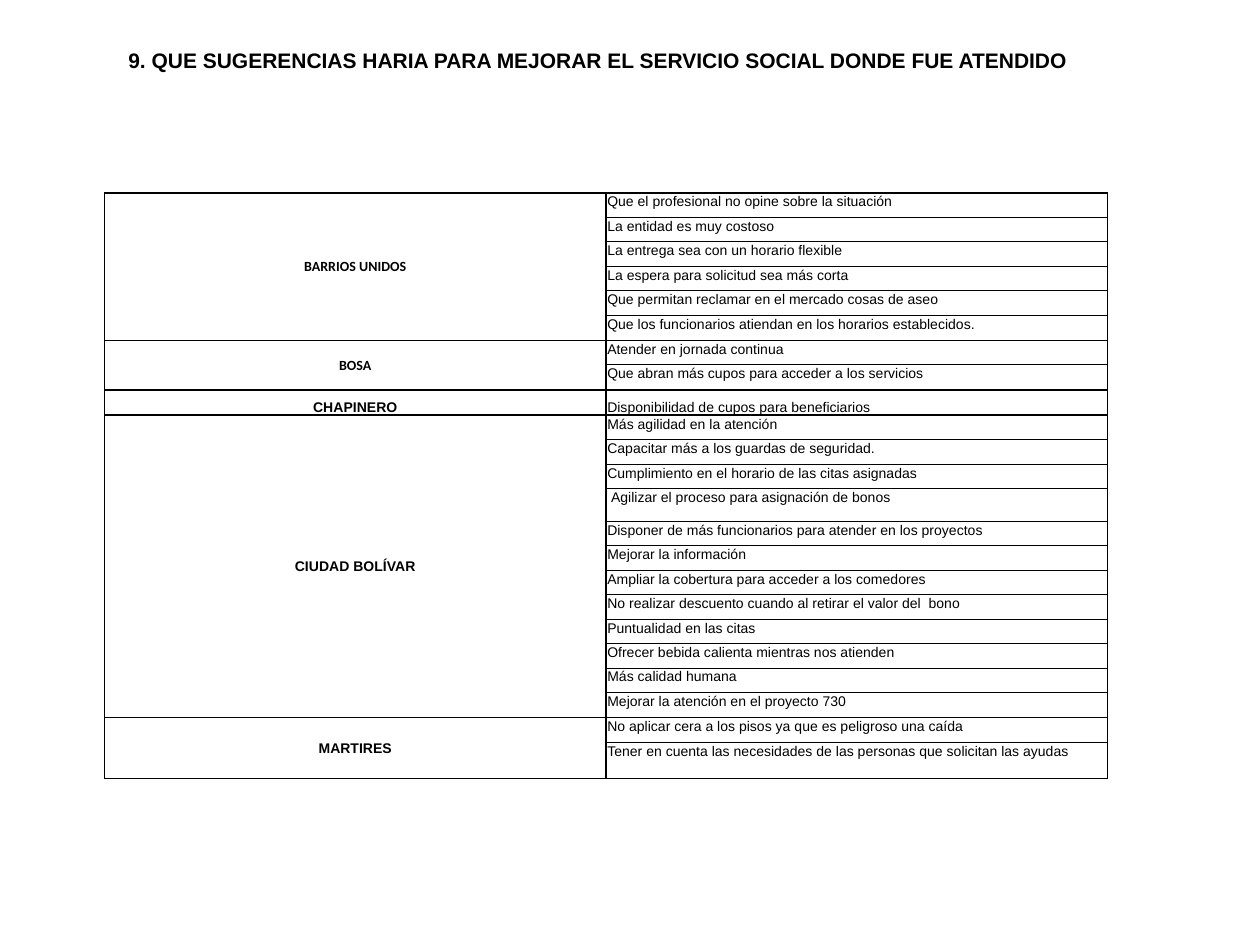
from dataclasses import dataclass

from lxml.etree import SubElement
from pptx import Presentation
from pptx.dml.color import RGBColor
from pptx.enum.text import MSO_ANCHOR as Anchor, PP_ALIGN as Align
from pptx.oxml.ns import qn
from pptx.util import Inches, Pt

COLORS = {"text": "000000", "border": "000000"}
THICK, THIN = 1, 0.5
ROW_HEIGHT = Inches(14 / 72)
GROUP_END_HEIGHT = Inches(0.2)
SPECIAL_HEIGHTS = {12: Inches(0.26), 22: Inches(0.29)}
INDENTED_ROW = 12


@dataclass
class Locality:
    name: str
    suggestions: list[str]
    font: str = "Arial"
    anchor: Anchor = Anchor.MIDDLE
    suggestion_anchor: Anchor = Anchor.TOP
    suggestion_align: Align = Align.JUSTIFY


LOCALITIES = [
    Locality("BARRIOS UNIDOS", [
        "Que el profesional no opine sobre la situación",
        "La entidad es muy costoso",
        "La entrega sea con un horario flexible",
        "La espera para solicitud sea más corta",
        "Que permitan reclamar en el mercado cosas de aseo",
        "Que los funcionarios atiendan en los horarios establecidos.",
    ], font="Calibri"),
    Locality("BOSA", [
        "Atender en jornada continua",
        "Que abran más cupos para acceder a los servicios",
    ], font="Calibri"),
    Locality("CHAPINERO", ["Disponibilidad de cupos para beneficiarios"],
             anchor=Anchor.BOTTOM, suggestion_anchor=Anchor.BOTTOM,
             suggestion_align=Align.LEFT),
    Locality("CIUDAD BOLÍVAR", [
        "Más agilidad en la atención",
        "Capacitar más a los guardas de seguridad.",
        "Cumplimiento en el horario de las citas asignadas",
        "Agilizar el proceso para asignación de bonos",
        "Disponer de más funcionarios para atender en los proyectos",
        "Mejorar la información",
        "Ampliar la cobertura para acceder a los comedores",
        "No realizar descuento cuando al retirar el valor del  bono",
        "Puntualidad en las citas",
        "Ofrecer bebida calienta mientras nos atienden",
        "Más calidad humana",
        "Mejorar la atención en el proyecto 730",
    ]),
    Locality("MARTIRES", [
        "No aplicar cera a los pisos ya que es peligroso una caída",
        "Tener en cuenta las necesidades de las personas que solicitan las ayudas",
    ]),
]


def add_run(paragraph, text: str, size: float, font: str, bold: bool) -> None:
    run = paragraph.add_run()
    run.text = text
    run.font.size = Pt(size)
    run.font.name = font
    run.font.bold = bold
    run.font.color.rgb = RGBColor.from_string(COLORS["text"])


def set_borders(cell, top: float = THICK, bottom: float = THICK) -> None:
    """Draw the four cell borders; the sides are always thick."""
    properties = cell._tc.get_or_add_tcPr()
    widths = {"a:lnL": THICK, "a:lnR": THICK, "a:lnT": top, "a:lnB": bottom}
    for tag, width in widths.items():
        line = SubElement(properties, qn(tag), w=str(Pt(width)))
        fill = SubElement(line, qn("a:solidFill"))
        SubElement(fill, qn("a:srgbClr"), val=COLORS["border"])


def fill_cell(cell, text: str, font: str, bold: bool, align: Align, anchor: Anchor) -> None:
    cell.margin_left = cell.margin_right = cell.margin_top = Inches(0.01)
    cell.margin_bottom = 0
    cell.vertical_anchor = anchor
    cell.fill.background()
    paragraph = cell.text_frame.paragraphs[0]
    paragraph.alignment = align
    add_run(paragraph, text, 8, font, bold)


def add_locality(table, first_row: int, locality: Locality) -> int:
    """Fill the rows of one locality and return the row after them."""
    last_row = first_row + len(locality.suggestions) - 1
    label = table.cell(first_row, 0)
    if last_row > first_row:
        label.merge(table.cell(last_row, 0))
    set_borders(label)
    fill_cell(label, locality.name, locality.font, True, Align.CENTER, locality.anchor)

    for row, suggestion in enumerate(locality.suggestions, first_row):
        height = GROUP_END_HEIGHT if row == last_row else ROW_HEIGHT
        table.rows[row].height = SPECIAL_HEIGHTS.get(row, height)
        cell = table.cell(row, 1)
        set_borders(cell, THICK if row == first_row else THIN,
                    THICK if row == last_row else THIN)
        fill_cell(cell, suggestion, "Arial", False,
                  locality.suggestion_align, locality.suggestion_anchor)
        if row == INDENTED_ROW:
            cell.text_frame.paragraphs[0]._p.get_or_add_pPr().set("marL", str(Inches(0.03)))
    return last_row + 1


def add_title(slide) -> None:
    box = slide.shapes.add_textbox(Inches(0.92), Inches(0.15), Inches(8.4), Inches(0.68))
    frame = box.text_frame
    frame.word_wrap = True
    frame.vertical_anchor = Anchor.MIDDLE
    paragraph = frame.paragraphs[0]
    paragraph.line_spacing = 0.9
    add_run(paragraph, "9. QUE SUGERENCIAS HARIA PARA MEJORAR EL SERVICIO SOCIAL DONDE FUE ATENDIDO",
            12, "Arial", True)


def add_suggestions(slide) -> None:
    row_count = sum(len(locality.suggestions) for locality in LOCALITIES)
    table = slide.shapes.add_table(row_count, 2, Inches(0.83), Inches(1.53),
                                   Inches(7.96), Inches(4.6)).table
    table.first_row = table.horz_banding = False
    next_row = 0
    for locality in LOCALITIES:
        next_row = add_locality(table, next_row, locality)


def main() -> None:
    presentation = Presentation()
    presentation.slide_width, presentation.slide_height = Inches(10), Inches(7.5)
    slide = presentation.slides.add_slide(presentation.slide_layouts[6])
    add_title(slide)
    add_suggestions(slide)
    presentation.save("out.pptx")


if __name__ == "__main__":
    main()
